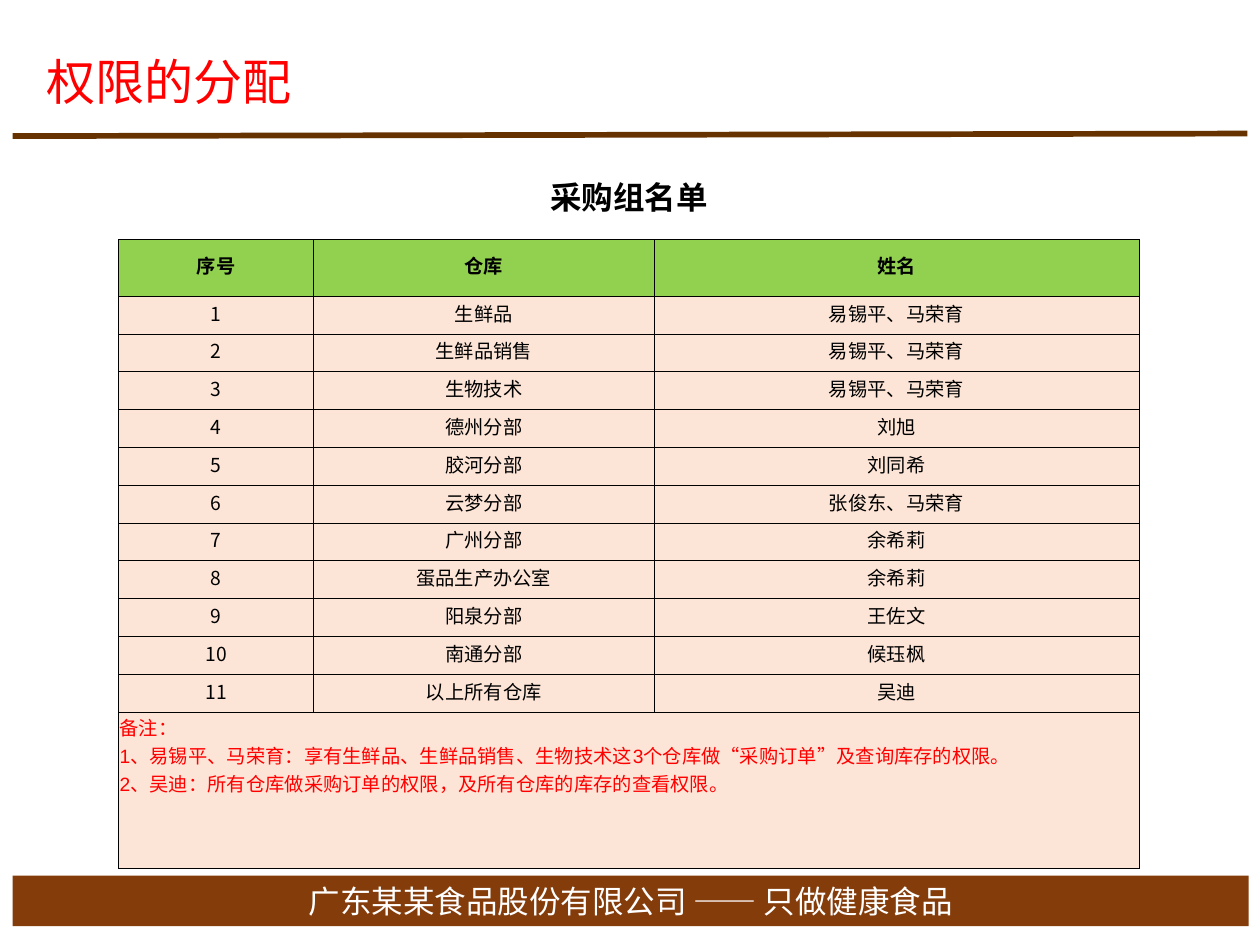
import dataclasses
import lxml.etree
import pptx
import pptx.dml.color
import pptx.enum.shapes
import pptx.enum.text
import pptx.oxml.ns
import pptx.util

Inches = pptx.util.Inches
Pt = pptx.util.Pt
ALIGN = pptx.enum.text.PP_ALIGN
ANCHOR = pptx.enum.text.MSO_ANCHOR
qn = pptx.oxml.ns.qn

CJK = "Noto Sans CJK SC"
BLACK, RED, WHITE = "000000", "FF0000", "FFFFFF"
GREEN, PEACH = "92D050", "FCE4D6"


@dataclasses.dataclass
class Style:
    size: float
    font: str = "Arial"
    color: str = BLACK
    bold: bool = False
    align: ALIGN = ALIGN.CENTER
    anchor: ANCHOR = ANCHOR.MIDDLE


def rgb(code: str) -> pptx.dml.color.RGBColor:
    return pptx.dml.color.RGBColor.from_string(code)


def write(frame, text: str, style: Style) -> None:
    frame.text = text
    for para in frame.paragraphs:
        para.alignment = style.align
        for run in para.runs:
            font = run.font
            font.name, font.size, font.bold = style.font, Pt(style.size), style.bold
            font.color.rgb = rgb(style.color)
            # East Asian typeface
            east = lxml.etree.SubElement(run._r.get_or_add_rPr(), qn("a:ea"))
            east.set("typeface", CJK)


def border(cell, sides: str) -> None:
    props = cell._tc.get_or_add_tcPr()
    for side in "LRTB":
        line = lxml.etree.SubElement(props, qn(f"a:ln{side}"), w=str(Pt(0.5)))
        if side in sides:
            fill = lxml.etree.SubElement(line, qn("a:solidFill"))
            lxml.etree.SubElement(fill, qn("a:srgbClr"), val=BLACK)
        else:
            lxml.etree.SubElement(line, qn("a:noFill"))


def draw(cell, text: str, style: Style, fill: str = "", sides: str = "LRTB") -> None:
    cell.margin_left = cell.margin_right = cell.margin_top = Inches(0.01)
    cell.margin_bottom = Inches(0.05)
    cell.vertical_anchor = style.anchor
    border(cell, sides)
    if fill:
        cell.fill.solid()
        cell.fill.fore_color.rgb = rgb(fill)
    else:
        cell.fill.background()
    write(cell.text_frame, text, style)


def span(table, row: int, text: str, style: Style, fill: str, sides: str) -> None:
    table.cell(row, 0).merge(table.cell(row, 2))
    for col in range(3):
        draw(table.cell(row, col), "" if col else text, style, fill, sides)


STAFF = [
    ("生鲜品", "易锡平、马荣育"),
    ("生鲜品销售", "易锡平、马荣育"),
    ("生物技术", "易锡平、马荣育"),
    ("德州分部", "刘旭"),
    ("胶河分部", "刘同希"),
    ("云梦分部", "张俊东、马荣育"),
    ("广州分部", "余希莉"),
    ("蛋品生产办公室", "余希莉"),
    ("阳泉分部", "王佐文"),
    ("南通分部", "候珏枫"),
    ("以上所有仓库", "吴迪"),
]
NOTES = "\n".join([
    "备注：",
    "1、易锡平、马荣育：享有生鲜品、生鲜品销售、生物技术这3个仓库做“采购订单”及查询库存的权限。",
    "2、吴迪：所有仓库做采购订单的权限，及所有仓库的库存的查看权限。",
])

deck = pptx.Presentation()
deck.slide_width, deck.slide_height = Inches(10), Inches(7.5)
slide = deck.slides.add_slide(deck.slide_layouts[5])
shapes = slide.shapes

# Footer band
band = shapes.add_shape(pptx.enum.shapes.MSO_SHAPE.RECTANGLE,
                        Inches(0.1), Inches(6.95), Inches(9.81), Inches(0.4))
band.shadow.inherit = False
band.fill.solid()
band.fill.fore_color.rgb = rgb("843C0B")
band.line.fill.background()
band.text_frame.vertical_anchor = ANCHOR.MIDDLE
write(band.text_frame, "广东某某食品股份有限公司 —— 只做健康食品", Style(18, CJK, WHITE))

# Rule under the title
rule = shapes.add_connector(pptx.enum.shapes.MSO_CONNECTOR.STRAIGHT,
                            Inches(0.1), Inches(1.08), Inches(9.9), Inches(1.06))
rule.line.color.rgb = rgb("663300")
rule.line.width = Pt(3.25)
lxml.etree.SubElement(rule._element.spPr, qn("a:effectLst"))

# Title
title = shapes.title
title.left, title.top = Inches(0.27), Inches(0.36)
title.width, title.height = Inches(5.61), Inches(0.57)
title.text_frame.vertical_anchor = ANCHOR.MIDDLE
write(title.text_frame, "权限的分配", Style(28, CJK, RED, align=ALIGN.LEFT))

# Table grid
widths = [1.55, 2.7, 3.85]
heights = [0.65, 0.45] + [0.3] * len(STAFF) + [1.24]
table = shapes.add_table(len(heights), len(widths), Inches(0.94), Inches(1.25),
                         Inches(sum(widths)), Inches(sum(heights))).table
table.first_row = table.horz_banding = False
for col, width in zip(table.columns, widths):
    col.width = Inches(width)
for row, height in zip(table.rows, heights):
    row.height = Inches(height)

# Table contents
span(table, 0, "采购组名单", Style(18, bold=True), "", "B")
for col, head in enumerate(["序号", "仓库", "姓名"]):
    draw(table.cell(1, col), head, Style(11, bold=True), GREEN)
for num, (store, names) in enumerate(STAFF, 1):
    draw(table.cell(num + 1, 0), str(num), Style(11, CJK), PEACH)
    draw(table.cell(num + 1, 1), store, Style(11), PEACH)
    draw(table.cell(num + 1, 2), names, Style(11), PEACH)
span(table, len(heights) - 1, NOTES,
     Style(11, color=RED, align=ALIGN.LEFT, anchor=ANCHOR.TOP), PEACH, "LRTB")

deck.save("out.pptx")
